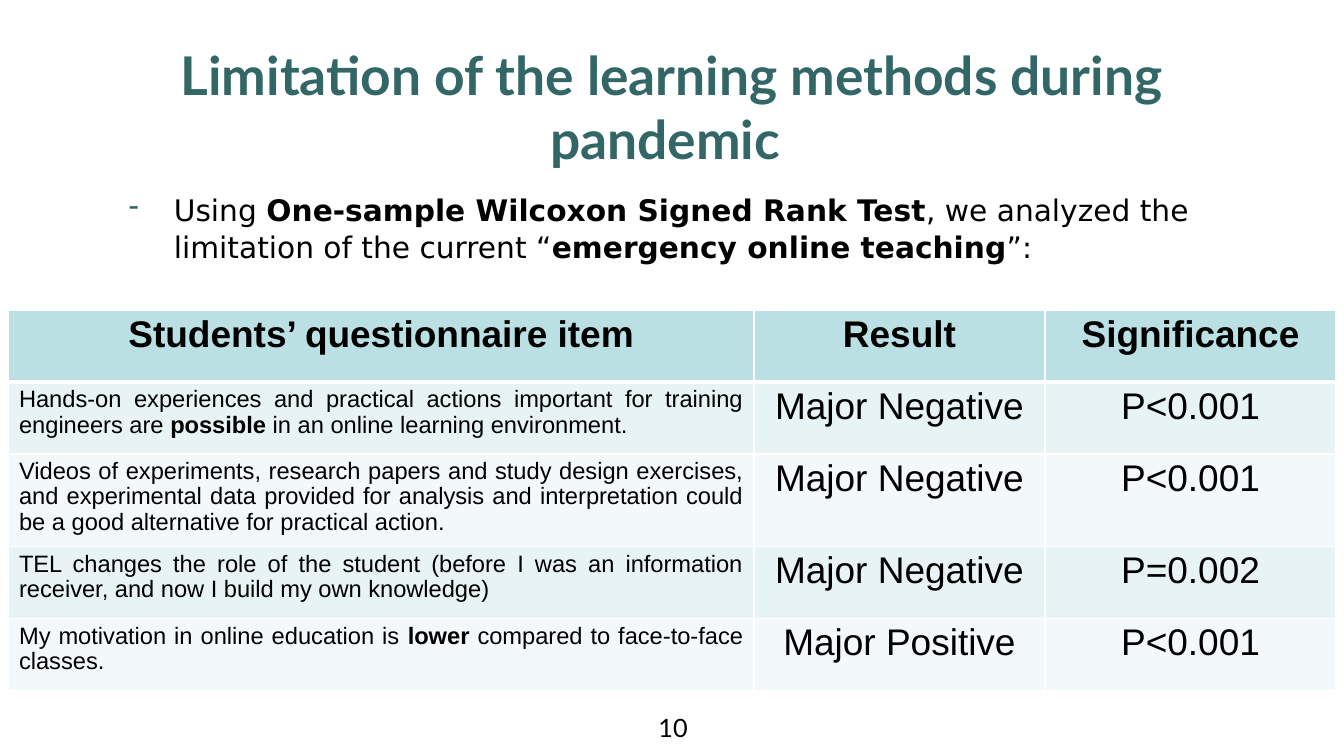
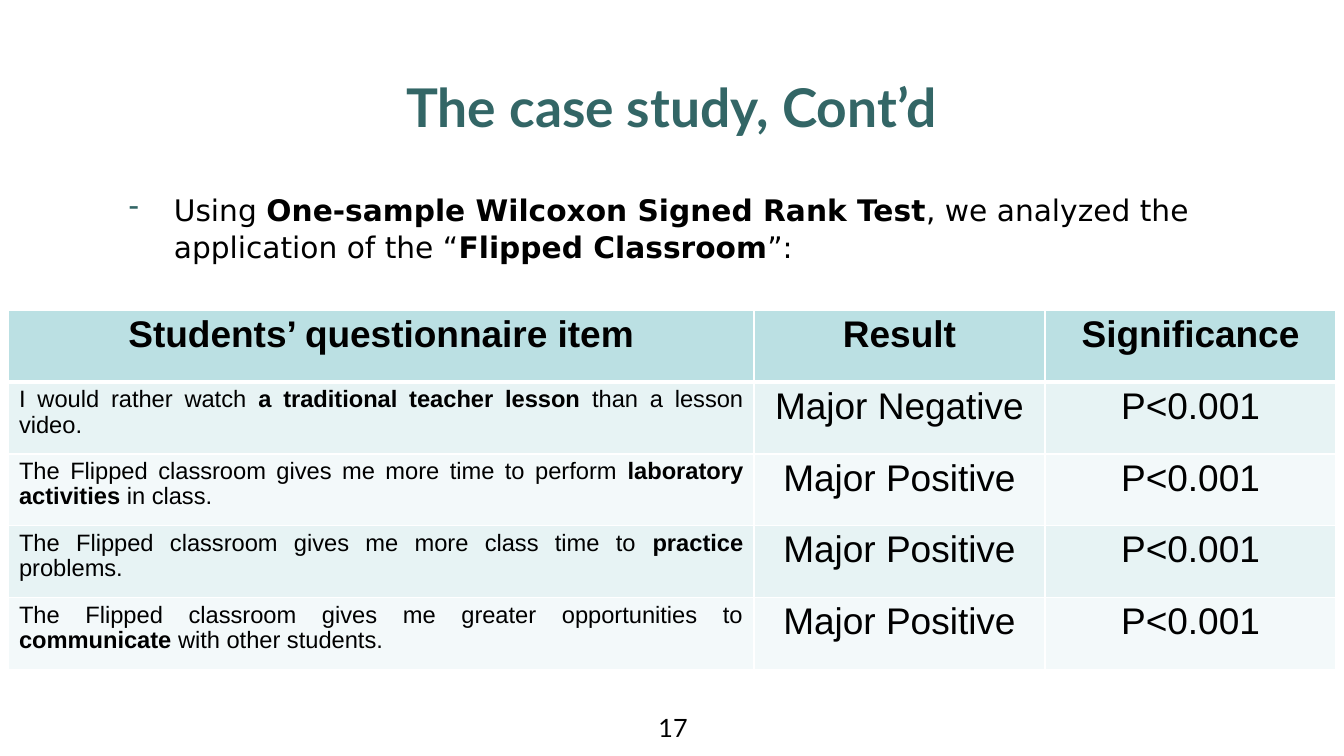
"""Build two survey result slides, each with a title, a lead sentence and a table."""
from dataclasses import dataclass

from lxml.etree import SubElement
from pptx import Presentation
from pptx.dml.color import RGBColor
from pptx.enum.text import MSO_ANCHOR as Anchor, PP_ALIGN as Align
from pptx.oxml.ns import qn
from pptx.util import Cm, Pt

TEAL = RGBColor(0x33, 0x66, 0x66)
BLACK = RGBColor(0x00, 0x00, 0x00)
WHITE = RGBColor(0xFF, 0xFF, 0xFF)
HEADER_FILL = RGBColor(0xBB, 0xE0, 0xE3)
BAND_FILLS = (RGBColor(0xE7, 0xF3, 0xF4), RGBColor(0xF3, 0xF9, 0xFA))

HEADINGS = ("Students’ questionnaire item", "Result", "Significance")
COLUMN_WIDTHS = (Cm(17.75), Cm(6.93), Cm(6.93))
ROW_HEIGHT = Cm(1.71)
BULLET_INDENT = Cm(1.07)


@dataclass(frozen=True)
class TextStyle:
    font: dict
    color: RGBColor
    align: Align = Align.LEFT
    spacing: float = 1.0


@dataclass(frozen=True)
class BoxStyle:
    place: tuple
    side_inset: Cm
    end_inset: Cm
    text: TextStyle
    anchor: Anchor = Anchor.TOP


@dataclass(frozen=True)
class Finding:
    item: str
    result: str
    significance: str = "P<0.001"


@dataclass(frozen=True)
class Page:
    title: str
    lead: str
    findings: tuple
    number: int


TITLE = BoxStyle(
    (Cm(2.62), Cm(1.04), Cm(26.75), Cm(3)), Cm(0.28), Cm(0.15),
    TextStyle({"name": "Lato", "size": Pt(36), "bold": True}, TEAL, Align.CENTER),
    Anchor.MIDDLE)
LEAD = BoxStyle(
    (Cm(2.79), Cm(4.39), Cm(26.57), Cm(2.59)), Cm(0.28), Cm(0.15),
    TextStyle({"name": "DejaVu Sans", "size": Pt(20), "bold": False}, BLACK, spacing=1.04))
NUMBER = BoxStyle(
    (Cm(12.29), Cm(16.79), Cm(7.47), Cm(0.61)), Cm(0.36), Cm(0.18),
    TextStyle({"name": "Lato", "size": Pt(17), "bold": False}, BLACK, Align.CENTER))
HEADING = TextStyle({"name": "Arial", "size": Pt(25), "bold": True}, BLACK, Align.CENTER, 0.96)
VALUE = TextStyle({"name": "Arial", "size": Pt(25), "bold": False}, BLACK, Align.CENTER, 0.96)
ITEM = TextStyle({"name": "Arial", "size": Pt(16), "bold": False}, BLACK, Align.JUSTIFY, 0.96)

PAGES = (
    Page(
        "Limitation of the learning methods during pandemic ",
        "Using **One-sample Wilcoxon Signed Rank Test**, we analyzed the limitation "
        "of the current “**emergency online teaching**”:",
        (
            Finding("Hands-on experiences and practical actions important for training "
                    "engineers are **possible** in an online learning environment.",
                    "Major Negative"),
            Finding("Videos of experiments, research papers and study design exercises, "
                    "and experimental data provided for analysis and interpretation "
                    "could be a good alternative for practical action.",
                    "Major Negative"),
            Finding("TEL changes the role of the student (before I was an information "
                    "receiver, and now I build my own knowledge)",
                    "Major Negative", "P=0.002"),
            Finding("My motivation in online education is **lower** compared to "
                    "face-to-face classes.", "Major Positive"),
        ),
        10),
    Page(
        "The case study, Cont’d",
        "Using **One-sample Wilcoxon Signed Rank Test**, we analyzed the application "
        "of the “**Flipped Classroom**”:",
        (
            Finding("I would rather watch **a traditional teacher lesson** than a lesson "
                    "video.", "Major Negative"),
            Finding("The Flipped classroom gives me more time to perform "
                    "**laboratory activities** in class.", "Major Positive"),
            Finding("The Flipped classroom gives me more class time to **practice** "
                    "problems.", "Major Positive"),
            Finding("The Flipped classroom gives me greater opportunities to "
                    "**communicate** with other students.", "Major Positive"),
        ),
        17),
)


def write(frame, text: str, style: TextStyle):
    """Write text in the first paragraph, with the parts between ** in bold."""
    para = frame.paragraphs[0]
    para.alignment = style.align
    para.line_spacing = style.spacing
    for index, part in enumerate(text.split("**")):
        span = para.add_run()
        span.text = part
        for name, value in style.font.items():
            setattr(span.font, name, value)
        span.font.color.rgb = style.color
        if index % 2:
            span.font.bold = True
    return para


def add_text(slide, text: str, style: BoxStyle):
    """Add a text box and return its paragraph."""
    frame = slide.shapes.add_textbox(*style.place).text_frame
    layout = {
        "word_wrap": True,
        "vertical_anchor": style.anchor,
        "margin_left": style.side_inset,
        "margin_right": style.side_inset,
        "margin_top": style.end_inset,
        "margin_bottom": style.end_inset,
    }
    for name, value in layout.items():
        setattr(frame, name, value)
    return write(frame, text, style.text)


def add_dash(para) -> None:
    """Give a paragraph a teal dash as its bullet."""
    properties = para._p.get_or_add_pPr()
    properties.set("marL", str(BULLET_INDENT))
    properties.set("indent", str(-BULLET_INDENT))
    color = SubElement(properties, qn("a:buClr"))
    SubElement(color, qn("a:srgbClr"), val=str(TEAL))
    SubElement(properties, qn("a:buChar"), char="-")


def add_borders(cell, widths: dict) -> None:
    """Draw white borders, with a width for each side."""
    properties = cell._tc.get_or_add_tcPr()
    for side, width in widths.items():
        line = SubElement(properties, qn(f"a:ln{side}"), w=str(width))
        fill = SubElement(line, qn("a:solidFill"))
        SubElement(fill, qn("a:srgbClr"), val=str(WHITE))


def fill_row(cells, texts: tuple, styles: tuple, fill: RGBColor, borders: dict) -> None:
    """Fill one table row with text, borders and a background."""
    for cell, text, style in zip(cells, texts, styles):
        write(cell.text_frame, text, style)
        add_borders(cell, borders)
        cell.fill.solid()
        cell.fill.fore_color.rgb = fill


def add_findings(slide, findings: tuple) -> None:
    """Add the table of questionnaire findings."""
    row_count = len(findings) + 1
    table = slide.shapes.add_table(
        row_count, len(HEADINGS), Cm(0.2), Cm(7.39),
        sum(COLUMN_WIDTHS), ROW_HEIGHT * row_count).table
    for column, width in zip(table.columns, COLUMN_WIDTHS):
        column.width = width
    for row in table.rows:
        row.height = ROW_HEIGHT
    thin = dict.fromkeys("LRTB", Pt(1))
    header, *body = table.rows
    fill_row(header.cells, HEADINGS, (HEADING,) * 3, HEADER_FILL, {**thin, "B": Pt(3)})
    for index, (row, finding) in enumerate(zip(body, findings)):
        texts = (finding.item, finding.result, finding.significance)
        borders = thin if index else {**thin, "T": Pt(3)}
        fill_row(row.cells, texts, (ITEM, VALUE, VALUE), BAND_FILLS[index % 2], borders)


def add_page(deck, page: Page) -> None:
    """Add one slide."""
    slide = deck.slides.add_slide(deck.slide_layouts[6])
    add_text(slide, page.title, TITLE)
    add_dash(add_text(slide, page.lead, LEAD))
    add_text(slide, str(page.number), NUMBER)
    add_findings(slide, page.findings)


def main() -> None:
    """Build and save the deck."""
    deck = Presentation()
    deck.slide_width = Cm(32)
    deck.slide_height = Cm(18)
    for page in PAGES:
        add_page(deck, page)
    deck.save("out.pptx")


if __name__ == "__main__":
    main()
